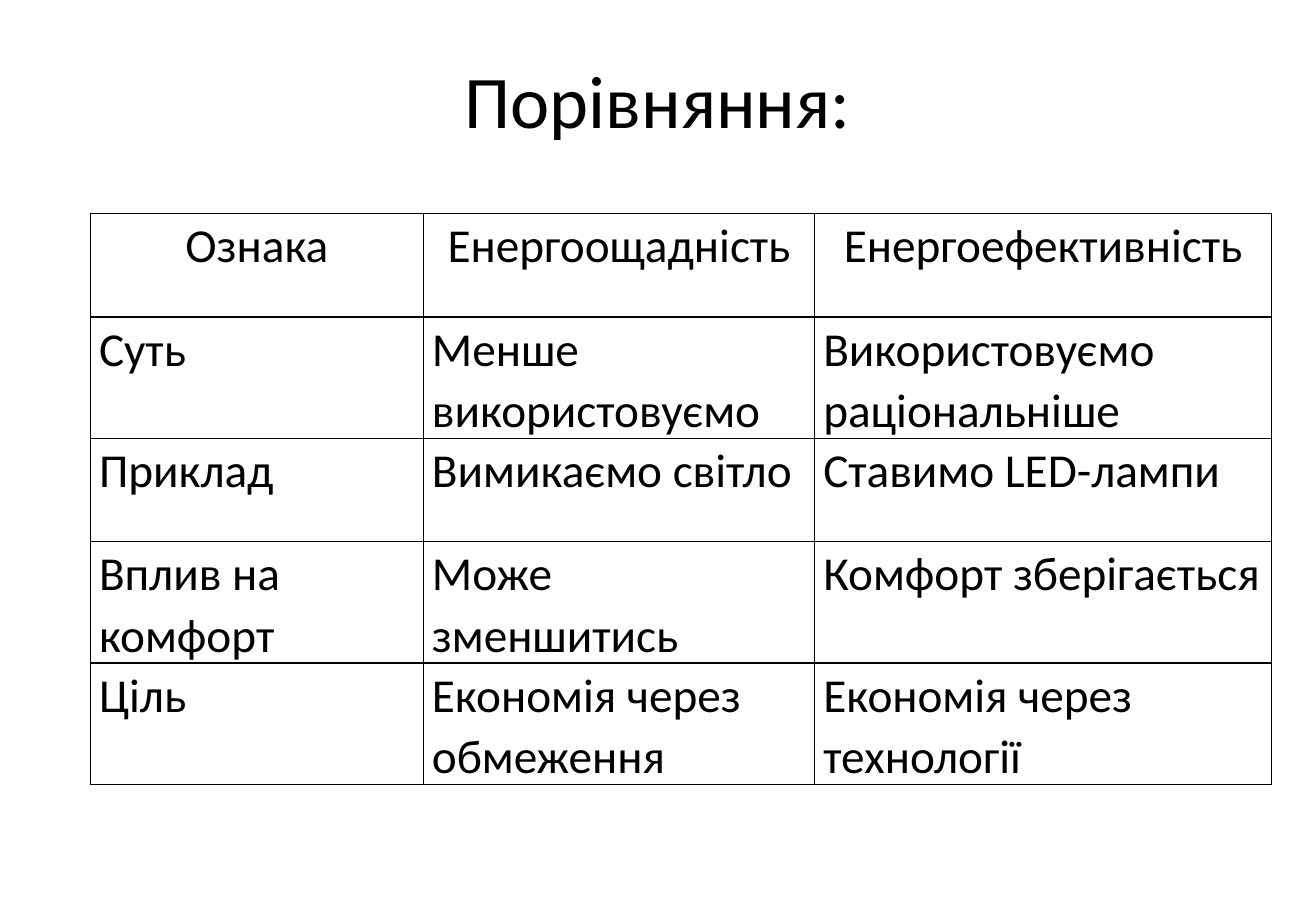
from lxml.etree import SubElement
from pptx import Presentation
from pptx.dml.color import RGBColor
from pptx.enum.text import MSO_ANCHOR as Anchor, PP_ALIGN as Align
from pptx.oxml.ns import qn
from pptx.util import Cm, Pt

COLORS = {"text": "000000", "border": "000000", "background": "FFFFFF"}
TITLE_FORMAT = {"alignment": Align.CENTER, "line_spacing": 0.9}
CELL_FORMAT = {"line_spacing": 1.07, "space_after": Pt(8)}
CELL_MARGINS = {"margin_left": Cm(0.18), "margin_right": Cm(0.18),
                "margin_top": 0, "margin_bottom": 0}
COLUMN_WIDTHS = [6.96, 8.18, 9.55]
ROW_HEIGHTS = [2.16, 1.8, 2.16, 2.16, 2.16]
COMPARISON = [
    ["Ознака", "Енергоощадність", "Енергоефективність"],
    ["Суть", "Менше використовуємо", "Використовуємо раціональніше"],
    ["Приклад", "Вимикаємо світло", "Ставимо LED-лампи"],
    ["Вплив на комфорт", "Може зменшитись", "Комфорт зберігається"],
    ["Ціль", "Економія через обмеження", "Економія через технології"],
]


def set_attributes(target, values):
    """Set every named attribute of the target."""
    for name, value in values.items():
        setattr(target, name, value)


def write_text(text_frame, text, size, paragraph_format):
    """Write one formatted paragraph into a text frame."""
    paragraph = text_frame.paragraphs[0]
    set_attributes(paragraph, paragraph_format)
    run = paragraph.add_run()
    run.text = text
    set_attributes(run.font, {"name": "Calibri", "size": Pt(size), "bold": False})
    run.font.color.rgb = RGBColor.from_string(COLORS["text"])


def add_borders(cell):
    """Draw a one-point line on all four sides of a cell."""
    properties = cell._tc.get_or_add_tcPr()
    for side in ("a:lnL", "a:lnR", "a:lnT", "a:lnB"):
        line = SubElement(properties, qn(side), w=str(Pt(1)))
        fill = SubElement(line, qn("a:solidFill"))
        SubElement(fill, qn("a:srgbClr"), val=COLORS["border"])


def add_title(slide, left, top, width, height):
    """Place the centred slide title in the given box."""
    shape = slide.shapes.add_textbox(left, top, width, height)
    set_attributes(shape.text_frame, {"word_wrap": True, "vertical_anchor": Anchor.MIDDLE})
    write_text(shape.text_frame, "Порівняння:", 44, TITLE_FORMAT)


def add_comparison_table(slide, left, top, width, height):
    """Place the bordered comparison table in the given box."""
    shape = slide.shapes.add_table(len(ROW_HEIGHTS), len(COLUMN_WIDTHS), left, top, width, height)
    table = shape.table
    set_attributes(table, {"first_row": False, "horz_banding": False})
    for column, column_width in zip(table.columns, COLUMN_WIDTHS):
        column.width = Cm(column_width)
    for row, row_height in zip(table.rows, ROW_HEIGHTS):
        row.height = Cm(row_height)
    for row_index, texts in enumerate(COMPARISON):
        alignment = Align.LEFT if row_index else Align.CENTER
        for column_index, text in enumerate(texts):
            cell = table.cell(row_index, column_index)
            set_attributes(cell, CELL_MARGINS)
            add_borders(cell)
            cell.fill.background()
            write_text(cell.text_frame, text, 28, {**CELL_FORMAT, "alignment": alignment})


def main():
    """Build and save the comparison slide."""
    presentation = Presentation()
    set_attributes(presentation, {"slide_width": Cm(27.51), "slide_height": Cm(19.05)})
    slide = presentation.slides.add_slide(presentation.slide_layouts[6])
    background = slide.background.fill
    background.solid()
    background.fore_color.rgb = RGBColor.from_string(COLORS["background"])
    add_title(slide, Cm(1.89), Cm(1.01), Cm(23.73), Cm(2.33))
    add_comparison_table(slide, Cm(1.89), Cm(4.47), Cm(24.69), Cm(11.94))
    presentation.save("out.pptx")


if __name__ == "__main__":
    main()
